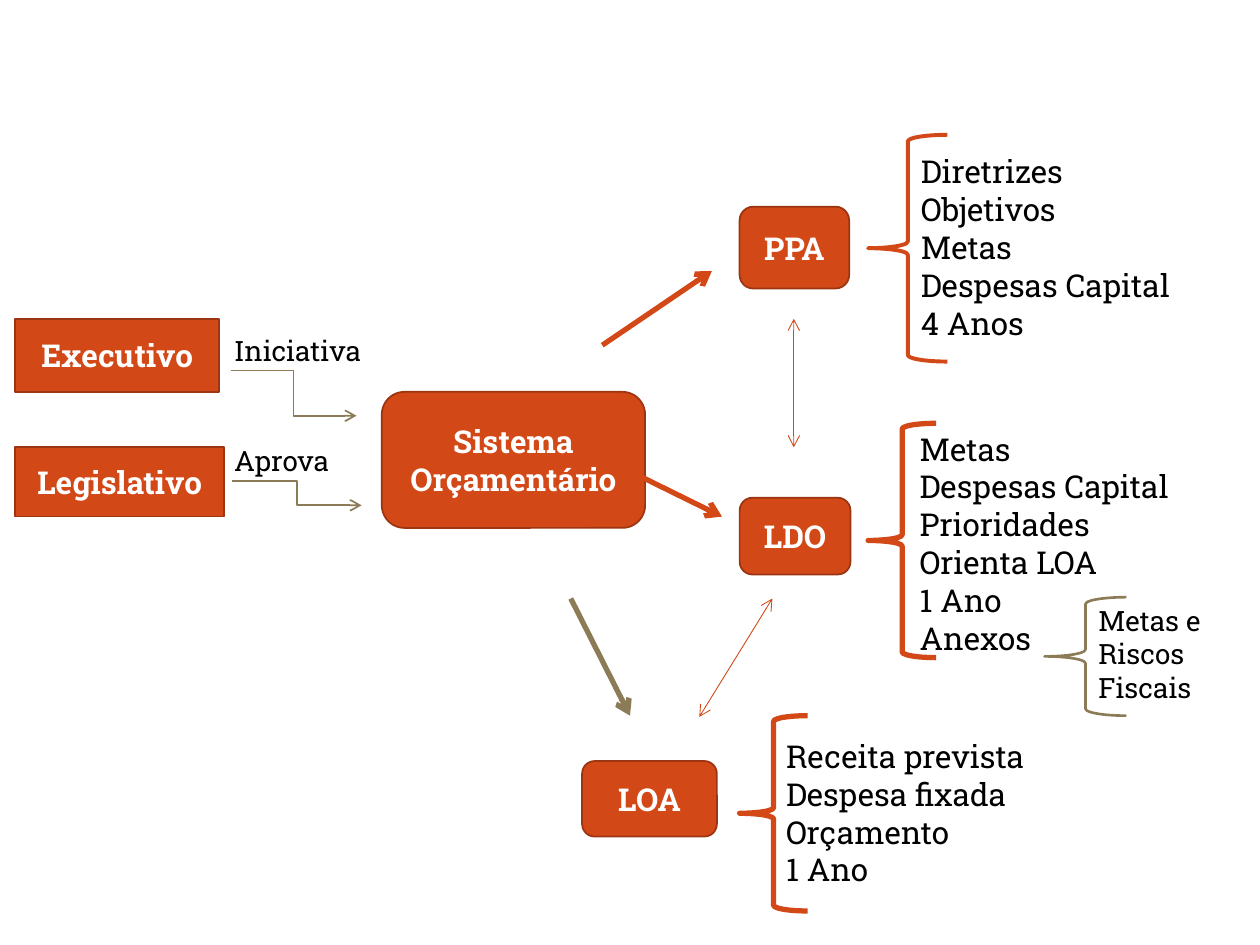
from lxml import etree
from pptx import Presentation
from pptx.dml.color import RGBColor
from pptx.enum.shapes import MSO_CONNECTOR, MSO_SHAPE
from pptx.enum.text import MSO_ANCHOR, PP_ALIGN
from pptx.oxml.ns import qn
from pptx.util import Pt

PX = 9144  # EMU in one px, 100 px to the inch
FONT = "Roboto Slab"
COLORS = {
    "orange": "D34817",
    "rust": "9C3511",
    "olive": "8B7B57",
    "white": "FFFFFF",
    "black": "000000",
}


def rgb(name):
    return RGBColor.from_string(COLORS[name])


def emu(*lengths):
    return [length * PX for length in lengths]


def within(box, part):
    """Turn a part's (left, top, width, height) in a box into slide px."""
    left, top, width, height = part
    return box[0] + left, box[1] + top, width, height


def style_font(paragraph, size, color, bold=False):
    font = paragraph.font
    font.name, font.size, font.bold = FONT, Pt(size), bold
    font.color.rgb = rgb(color)


def add_block(slide, box, title, kind):
    block = slide.shapes.add_shape(kind, *emu(*box))
    block.shadow.inherit = False
    block.fill.solid()
    block.fill.fore_color.rgb = rgb("orange")
    block.line.color.rgb = rgb("rust")
    block.line.width = Pt(1)
    frame = block.text_frame
    frame.word_wrap = True
    frame.vertical_anchor = MSO_ANCHOR.MIDDLE
    heading = frame.paragraphs[0]
    heading.text = title
    heading.alignment = PP_ALIGN.CENTER
    style_font(heading, 18, "white", bold=True)


def add_lines(slide, box, lines, size):
    frame = slide.shapes.add_textbox(*emu(*box)).text_frame
    frame.word_wrap = True
    for index, line in enumerate(lines):
        paragraph = frame.add_paragraph() if index else frame.paragraphs[0]
        paragraph.text = line
        style_font(paragraph, size, "black")


def add_brace(slide, box, color, weight):
    brace = slide.shapes.add_shape(MSO_SHAPE.LEFT_BRACE, *emu(*box))
    brace.shadow.inherit = False
    brace.fill.background()
    brace.line.color.rgb = rgb(color)
    brace.line.width = Pt(weight)


def add_arrow(slide, start, end, color, weight,
              kind=MSO_CONNECTOR.STRAIGHT, both_ends=False):
    arrow = slide.shapes.add_connector(kind, *emu(*start, *end))
    arrow.line.color.rgb = rgb(color)
    arrow.line.width = Pt(weight)
    line = arrow.line._get_or_add_ln()
    for tag in ("a:headEnd", "a:tailEnd") if both_ends else ("a:tailEnd",):
        etree.SubElement(line, qn(tag), type="arrow")
    etree.SubElement(arrow._element.spPr, qn("a:effectLst"))


def add_power(slide, box, name, name_box, role, role_box, start, end):
    """Place a branch of government, its role and the elbow arrow below it."""
    left, top = box
    add_block(slide, within(box, name_box), name, MSO_SHAPE.RECTANGLE)
    add_arrow(slide, (left + start[0], top + start[1]),
              (left + end[0], top + end[1]), "olive", 1, MSO_CONNECTOR.ELBOW)
    add_lines(slide, within(box, role_box), [role], 16)


def add_law(slide, box, name, name_box, brace_box, weight, list_box, items):
    """Place a budget law with the brace and list of its contents."""
    add_block(slide, within(box, name_box), name, MSO_SHAPE.ROUNDED_RECTANGLE)
    add_lines(slide, within(box, list_box), items, 18)
    add_brace(slide, within(box, brace_box), "orange", weight)


def add_annexes(slide, box):
    add_brace(slide, within(box, (0, 0, 65, 94)), "olive", 1.5)
    add_lines(slide, within(box, (33, 0, 157, 94)),
              ["Metas e Riscos Fiscais"], 16)


def add_flows(slide):
    """Link the budget system to its laws, and the laws to each other."""
    add_arrow(slide, (478, 274), (565, 215), "orange", 3)
    add_arrow(slide, (510, 379), (573, 410), "orange", 3)
    add_arrow(slide, (453, 475), (500, 568), "olive", 3)
    for start, end in (((630, 253), (630, 355)), ((613, 475), (555, 569))):
        add_arrow(slide, start, end, "orange", 0.5, both_ends=True)


def main():
    deck = Presentation()
    deck.slide_width, deck.slide_height = emu(1000, 750)
    slide = deck.slides.add_slide(deck.slide_layouts[6])

    add_power(slide, (12, 253), "Executivo", (0, 0, 162, 58),
              "Iniciativa", (164, 7, 150, 37), (171, 41), (271, 77))
    add_power(slide, (12, 347), "Legislativo", (0, 8, 166, 55),
              "Aprova", (164, 0, 116, 37), (172, 35), (275, 54))
    add_block(slide, (303, 311, 209, 108), "Sistema Orçamentário",
              MSO_SHAPE.ROUNDED_RECTANGLE)

    add_law(slide, (587, 107), "PPA", (0, 57, 87, 65),
            (102, 0, 63, 180), 2.25, (134, 9, 264, 162),
            ["Diretrizes", "Objetivos", "Metas", "Despesas Capital", "4 Anos"])
    add_law(slide, (587, 336), "LDO", (0, 59, 88, 61),
            (102, 0, 54, 186), 3, (133, 0, 252, 192),
            ["Metas", "Despesas Capital", "Prioridades", "Orienta LOA",
             "1 Ano", "Anexos"])
    add_annexes(slide, (829, 474))
    add_law(slide, (462, 568), "LOA", (0, 36, 107, 60),
            (125, 0, 54, 155), 3, (152, 12, 263, 131),
            ["Receita prevista", "Despesa fixada", "Orçamento", "1 Ano"])
    add_flows(slide)

    deck.save("out.pptx")


if __name__ == "__main__":
    main()
